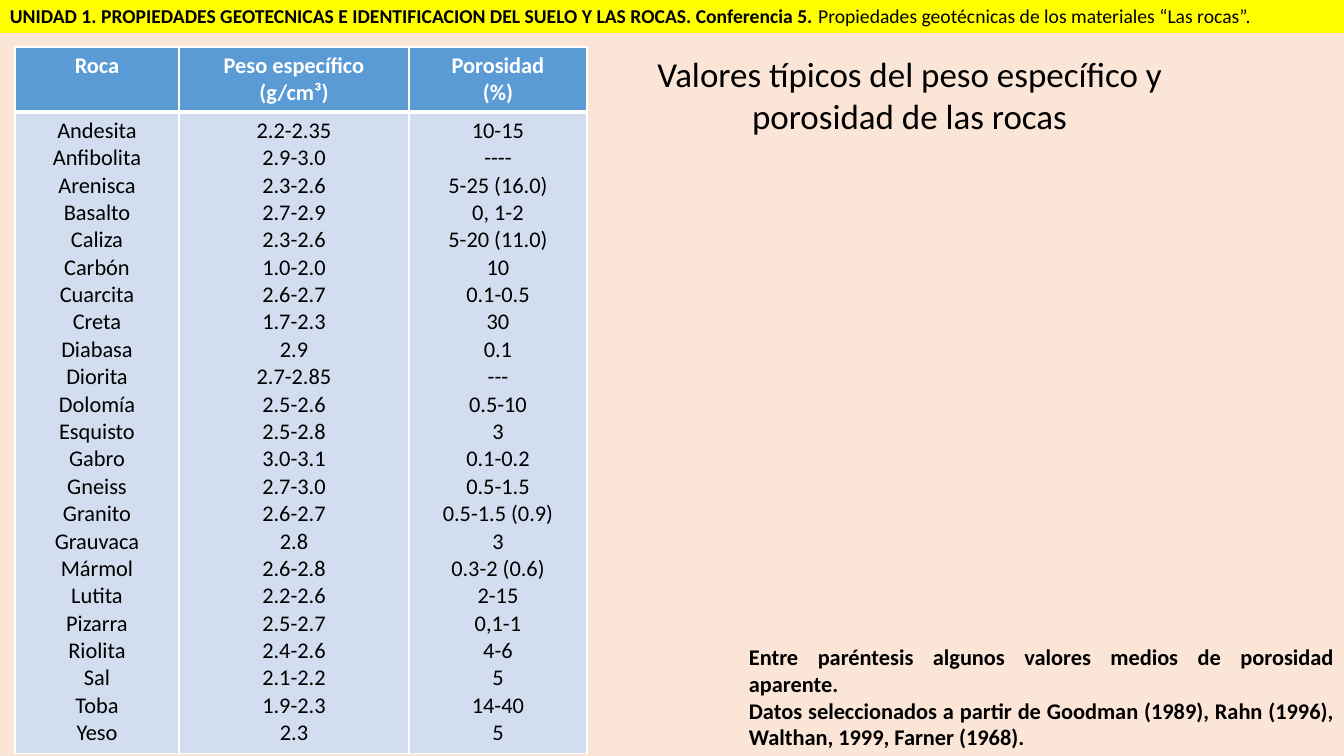
from lxml import etree
from pptx import Presentation
from pptx.dml.color import RGBColor
from pptx.enum import shapes, text
from pptx.oxml import ns
from pptx.util import Emu, Pt

EMU_PER_PX = 914400 / 100.8
FONT = "Calibri"
COLORS = {
    "background": "FBE5D6",
    "banner": "FFFF00",
    "header": "5B9BD5",
    "body": "D2DEEF",
    "white": "FFFFFF",
    "black": "000000",
}
HEADINGS = [["Roca"], ["Peso específico", "(g/cm³)"], ["Porosidad", "(%)"]]
ROCKS = [
    ("Andesita", "2.2-2.35", "10-15"),
    ("Anfibolita", "2.9-3.0", "----"),
    ("Arenisca", "2.3-2.6", "5-25 (16.0)"),
    ("Basalto", "2.7-2.9", "0, 1-2"),
    ("Caliza", "2.3-2.6", "5-20 (11.0)"),
    ("Carbón", "1.0-2.0", "10"),
    ("Cuarcita", "2.6-2.7", "0.1-0.5"),
    ("Creta", "1.7-2.3", "30"),
    ("Diabasa", "2.9", "0.1"),
    ("Diorita", "2.7-2.85", "---"),
    ("Dolomía", "2.5-2.6", "0.5-10"),
    ("Esquisto", "2.5-2.8", "3"),
    ("Gabro", "3.0-3.1", "0.1-0.2"),
    ("Gneiss", "2.7-3.0", "0.5-1.5"),
    ("Granito", "2.6-2.7", "0.5-1.5 (0.9)"),
    ("Grauvaca", "2.8", "3"),
    ("Mármol", "2.6-2.8", "0.3-2 (0.6)"),
    ("Lutita", "2.2-2.6", "2-15"),
    ("Pizarra", "2.5-2.7", "0,1-1"),
    ("Riolita", "2.4-2.6", "4-6"),
    ("Sal", "2.1-2.2", "5"),
    ("Toba", "1.9-2.3", "14-40"),
    ("Yeso", "2.3", "5"),
]
COLUMN_WIDTHS = [164, 230, 178]
ROW_HEIGHTS = [64, 642]


def px(length):
    return Emu(round(length * EMU_PER_PX))


def box(*lengths):
    return [px(length) for length in lengths]


def color(name):
    return RGBColor.from_string(COLORS[name])


def paint(fill, name):
    fill.solid()
    fill.fore_color.rgb = color(name)


def write(frame, paragraphs, size, align, ink="black"):
    """Fill a text frame; each paragraph is a list of (words, bold) runs."""
    frame.word_wrap = True
    for index, runs in enumerate(paragraphs):
        paragraph = frame.add_paragraph() if index else frame.paragraphs[0]
        paragraph.alignment = align
        for words, bold in runs:
            run = paragraph.add_run()
            run.text = words
            run.font.name = FONT
            run.font.size = Pt(size)
            run.font.bold = bold
            run.font.color.rgb = color(ink)


def add_borders(cell, widths):
    """Draw white cell borders; widths maps a side (L, R, T, B) to points."""
    properties = cell._tc.get_or_add_tcPr()
    for side, width in widths.items():
        line = etree.SubElement(properties, ns.qn(f"a:ln{side}"), w=str(Pt(width)))
        fill = etree.SubElement(line, ns.qn("a:solidFill"))
        etree.SubElement(fill, ns.qn("a:srgbClr"), val=COLORS["white"])


def fill_cell(cell, lines, is_header):
    borders = {"L": 1, "R": 1, "T": 1, "B": 3} if is_header else {"L": 1, "R": 1, "T": 3, "B": 1}
    add_borders(cell, borders)
    paint(cell.fill, "header" if is_header else "body")
    write(cell.text_frame, [[(line, is_header)] for line in lines], 16,
          text.PP_ALIGN.CENTER, "white" if is_header else "black")


def add_rock_table(slide):
    frame = slide.shapes.add_table(
        len(ROW_HEIGHTS), len(COLUMN_WIDTHS),
        *box(15, 47, sum(COLUMN_WIDTHS), sum(ROW_HEIGHTS)))
    table = frame.table
    for row, height in zip(table.rows, ROW_HEIGHTS):
        row.height = px(height)
    for index, (width, heading, values) in enumerate(
            zip(COLUMN_WIDTHS, HEADINGS, zip(*ROCKS))):
        table.columns[index].width = px(width)
        fill_cell(table.cell(0, index), heading, True)
        fill_cell(table.cell(1, index), values, False)


def set_title(slide, words):
    title = slide.shapes.title
    title.left, title.top, title.width, title.height = box(605, 47, 609, 95)
    title.text_frame.vertical_anchor = text.MSO_ANCHOR.TOP
    title.text_frame.auto_size = text.MSO_AUTO_SIZE.NONE
    write(title.text_frame, [[(words, False)]], 25, text.PP_ALIGN.CENTER)


def add_note(slide, paragraphs):
    note = slide.shapes.add_textbox(*box(739, 638, 605, 119))
    write(note.text_frame, [[(words, True)] for words in paragraphs], 16,
          text.PP_ALIGN.JUSTIFY)


def add_banner(slide, runs):
    banner = slide.shapes.add_shape(
        shapes.MSO_SHAPE.RECTANGLE, *box(0, -1, 1344, 34))
    banner.shadow.inherit = False
    banner.line.fill.background()
    paint(banner.fill, "banner")
    banner.text_frame.vertical_anchor = text.MSO_ANCHOR.MIDDLE
    write(banner.text_frame, [runs], 14, text.PP_ALIGN.LEFT)


def main():
    presentation = Presentation()
    presentation.slide_width, presentation.slide_height = box(1344, 756)
    slide = presentation.slides.add_slide(presentation.slide_layouts[5])
    paint(slide.background.fill, "background")
    add_rock_table(slide)
    set_title(slide, "Valores típicos del peso específico y porosidad de las rocas")
    add_note(slide, [
        "Entre paréntesis algunos valores medios de porosidad aparente.",
        "Datos seleccionados a partir de Goodman (1989), Rahn (1996), "
        "Walthan, 1999, Farner (1968).",
    ])
    add_banner(slide, [
        ("UNIDAD 1. PROPIEDADES GEOTECNICAS E IDENTIFICACION DEL SUELO "
         "Y LAS ROCAS. Conferencia 5. ", True),
        ("Propiedades geotécnicas de los materiales “Las rocas”.", False),
    ])
    presentation.save("out.pptx")


if __name__ == "__main__":
    main()
